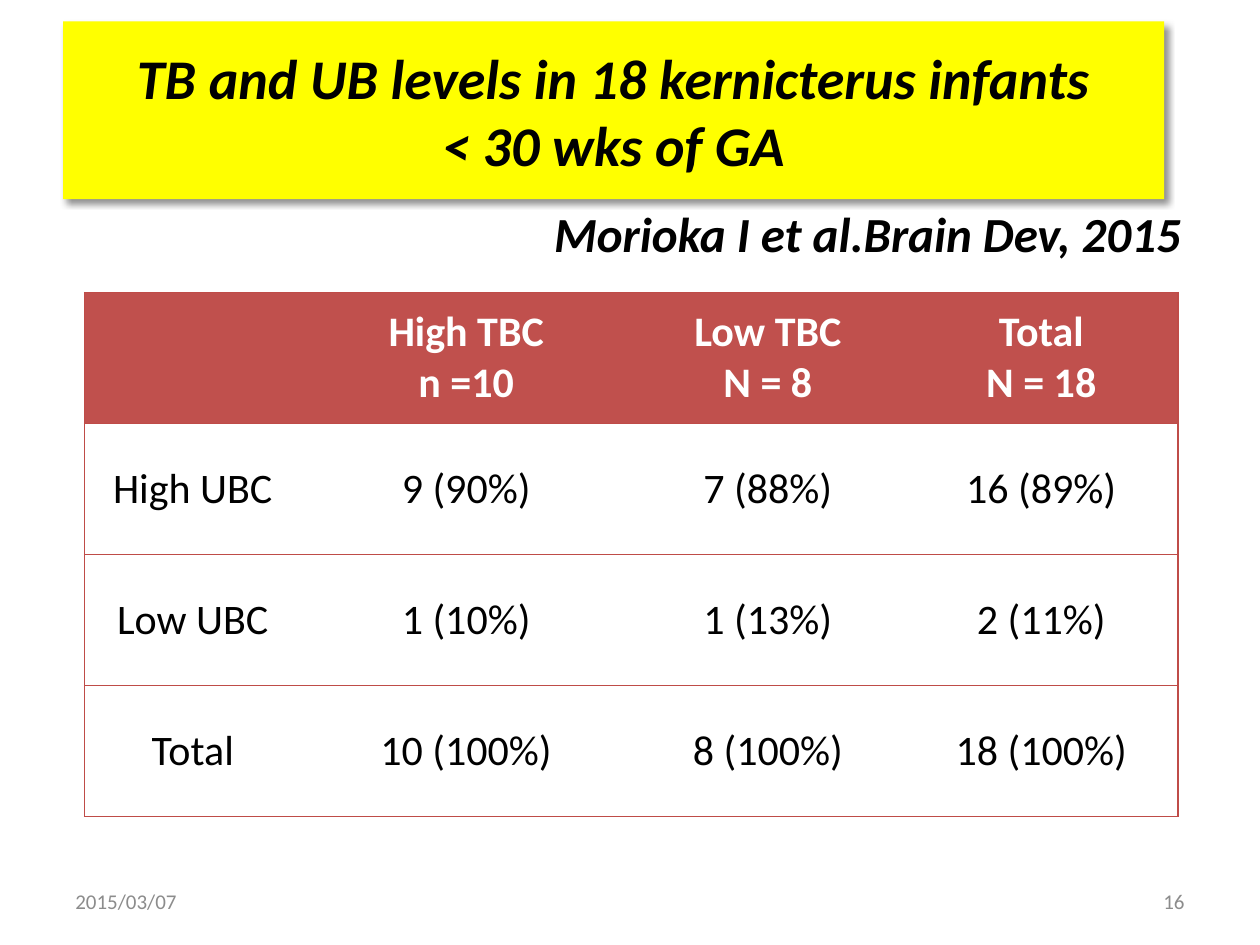
"""Build a slide with a table of TB and UB levels in kernicterus infants."""
import lxml.etree
import pptx
import pptx.dml.color
import pptx.enum.text
import pptx.oxml
import pptx.oxml.ns
import pptx.util

Inches = pptx.util.Inches
Align = pptx.enum.text.PP_ALIGN
Anchor = pptx.enum.text.MSO_ANCHOR
NAMESPACE = pptx.oxml.ns.nsdecls("a")


def color(value):
    return pptx.dml.color.RGBColor.from_string(value)


class SlideBuilder:
    font = "Calibri"
    black, white, gray = "000000", "FFFFFF", "8C8C8C"
    yellow, red, border = "FFFF00", "C0504D", "BF4C48"

    def __init__(self, presentation):
        self.slide = presentation.slides.add_slide(presentation.slide_layouts[5])

    def add_run(self, paragraph, text, size, ink, bold=False, italic=False, align=Align.LEFT):
        paragraph.alignment = align
        run = paragraph.add_run()
        run.text = text
        run.font.name = self.font
        run.font.size = pptx.util.Pt(size)
        run.font.bold = bold
        run.font.italic = italic
        run.font.color.rgb = color(ink)

    def add_title(self, lines, left, top, width, height):
        title = self.slide.shapes.title
        title.left, title.top = Inches(left), Inches(top)
        title.width, title.height = Inches(width), Inches(height)
        title.fill.solid()
        title.fill.fore_color.rgb = color(self.yellow)
        title.text_frame.vertical_anchor = Anchor.MIDDLE
        paragraph = title.text_frame.paragraphs[0]
        for index, line in enumerate(lines):
            if index:
                paragraph.add_line_break()
            self.add_run(paragraph, line, 32, self.black, True, True, Align.CENTER)
        title._element.spPr.append(pptx.oxml.parse_xml(
            f'<a:effectLst {NAMESPACE}><a:outerShdw blurRad="50800" dist="38100" dir="2700000" '
            f'algn="tl" rotWithShape="0"><a:srgbClr val="{self.black}"><a:alpha val="43000"/>'
            '</a:srgbClr></a:outerShdw></a:effectLst>'))

    def add_text(self, text, left, top, width, height, size, ink, anchor=Anchor.TOP, **style):
        box = self.slide.shapes.add_textbox(
            Inches(left), Inches(top), Inches(width), Inches(height))
        box.text_frame.word_wrap = True
        box.text_frame.vertical_anchor = anchor
        self.add_run(box.text_frame.paragraphs[0], text, size, ink, **style)

    def add_borders(self, cell, sides):
        properties = cell._tc.get_or_add_tcPr()
        for index, side in enumerate("LRTB"):
            line = lxml.etree.Element(pptx.oxml.ns.qn(f"a:ln{side}"), w="9525")
            if side in sides:
                fill = lxml.etree.SubElement(line, pptx.oxml.ns.qn("a:solidFill"))
                lxml.etree.SubElement(fill, pptx.oxml.ns.qn("a:srgbClr"), val=self.border)
            else:
                lxml.etree.SubElement(line, pptx.oxml.ns.qn("a:noFill"))
            properties.insert(index, line)

    def add_table(self, rows, left, top, widths, row_height):
        table = self.slide.shapes.add_table(
            len(rows), len(widths), Inches(left), Inches(top),
            Inches(sum(widths)), Inches(row_height * len(rows))).table
        table.horz_banding = False
        for column, width in zip(table.columns, widths):
            column.width = Inches(width)
        for row_index, values in enumerate(rows):
            table.rows[row_index].height = Inches(row_height)
            header = row_index == 0
            for column_index, value in enumerate(values):
                cell = table.cell(row_index, column_index)
                cell.fill.solid()
                cell.fill.fore_color.rgb = color(self.red if header else self.white)
                cell.vertical_anchor = Anchor.MIDDLE
                cell.margin_left = cell.margin_right = Inches(0.07)
                cell.margin_top = cell.margin_bottom = 0
                for index, line in enumerate(value.split("\n") if value else []):
                    frame = cell.text_frame
                    paragraph = frame.add_paragraph() if index else frame.paragraphs[0]
                    self.add_run(paragraph, line, 24, self.white if header else self.black,
                                 bold=header, align=Align.CENTER)
                sides = "TB"
                if column_index == 0:
                    sides += "L"
                if column_index == len(widths) - 1:
                    sides += "R"
                self.add_borders(cell, sides)


def main():
    presentation = pptx.Presentation()
    presentation.slide_width, presentation.slide_height = Inches(10), Inches(7.5)
    builder = SlideBuilder(presentation)
    builder.add_title(["TB and UB levels in 18 kernicterus infants", "< 30 wks of GA"],
                      0.5, 0.17, 8.74, 1.41)
    builder.add_table([
        ["", "High TBC\nn =10", "Low TBC\nN = 8", "Total\nN = 18"],
        ["High UBC", "9 (90%)", "7 (88%)", "16 (89%)"],
        ["Low UBC", "1 (10%)", "1 (13%)", "2 (11%)"],
        ["Total", "10 (100%)", "8 (100%)", "18 (100%)"],
    ], 0.67, 2.32, [1.72, 2.62, 2.17, 2.17], 1.04)
    builder.add_text("Morioka I et al.Brain Dev, 2015", 4.3, 1.57, 5.37, 0.57,
                     28, builder.black, bold=True, italic=True)
    for text, left, align in [("2015/03/07", 0.5, Align.LEFT), ("16", 7.17, Align.RIGHT)]:
        builder.add_text(text, left, 6.95, 2.33, 0.4, 12, builder.gray, Anchor.MIDDLE, align=align)
    presentation.save("out.pptx")


if __name__ == "__main__":
    main()
